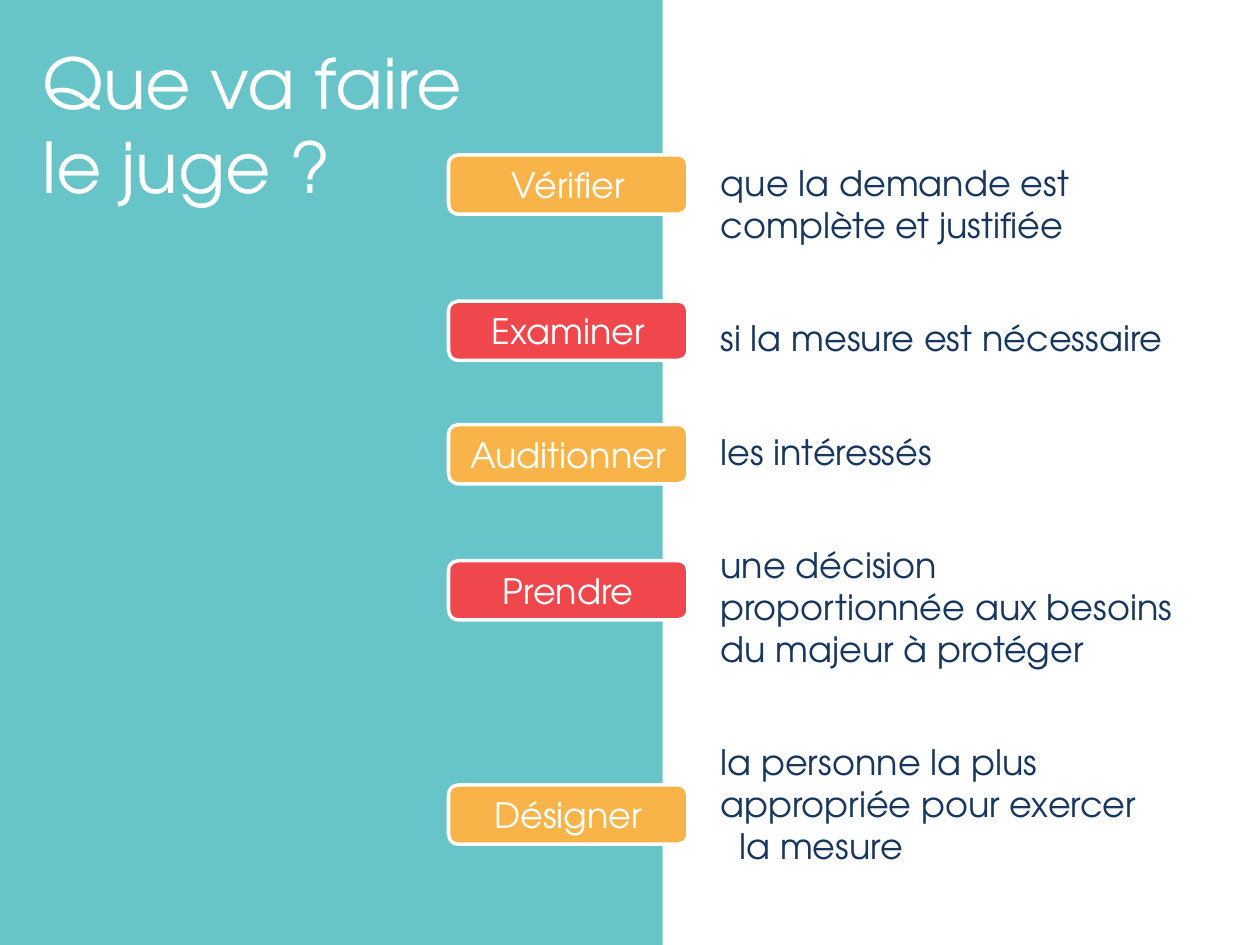
from pptx import Presentation
from pptx.dml.color import RGBColor
from pptx.enum.shapes import MSO_SHAPE as SHAPE
from pptx.enum.text import MSO_ANCHOR as ANCHOR, PP_ALIGN as ALIGN
from pptx.util import Inches, Pt

COLORS = {"teal": "67C4C9", "amber": "F8B449", "red": "F0474C",
          "white": "FFFFFF", "navy": "17375E"}
FONT = "TeX Gyre Adventor"
STEPS = [("Vérifier", 1.23), ("Examiner", 2.39), ("Auditionner", 3.37),
         ("Prendre", 4.45), ("Désigner", 6.23)]
DETAILS = ["que la demande est complète et justifiée",
           "si la mesure est nécessaire",
           "les intéressés",
           "une décision proportionnée aux besoins du majeur à protéger",
           "la personne la plus appropriée pour exercer"]
LAST_LINE = "la mesure"


def rgb(name):
    """Return the named colour."""
    return RGBColor.from_string(COLORS[name])


def write(p, text, size=20, color="white", align=ALIGN.LEFT, before=0, indent=0):
    """Write text into a paragraph with its format."""
    p.text = text
    p.alignment = align
    p.space_before = Pt(before)
    p.font.size = Pt(size)
    p.font.name = FONT
    p.font.color.rgb = rgb(color)
    if indent:
        p._p.get_or_add_pPr().set("marL", str(Inches(indent)))


def add_box(s, kind, x, y, w, h, fill, line=None):
    """Add a filled preset shape with an optional outline."""
    sp = s.shapes.add_shape(kind, Inches(x), Inches(y), Inches(w), Inches(h))
    sp.shadow.inherit = False
    sp.fill.solid()
    sp.fill.fore_color.rgb = rgb(fill)
    if line:
        sp.line.color.rgb = rgb(line)
        sp.line.width = Pt(2)
    else:
        sp.line.fill.background()
    return sp


def add_text_frame(s, x, y, w, h, anchor=ANCHOR.TOP):
    """Add a wrapping text box and return its text frame."""
    tf = s.shapes.add_textbox(Inches(x), Inches(y), Inches(w), Inches(h)).text_frame
    tf.word_wrap = True
    tf.vertical_anchor = anchor
    return tf


def add_title_panel(s, x, y, w, h):
    """Draw the teal panel with the title at its top."""
    add_box(s, SHAPE.RECTANGLE, x, y, w, h, "teal")
    tf = add_text_frame(s, x + 0.24, y + 0.22, w - 0.5, 1.52, ANCHOR.MIDDLE)
    write(tf.paragraphs[0], "Que va faire\vle juge ?", size=40)


def add_details(s, x, y, w, h):
    """Write what the judge does, one paragraph for each step."""
    tf = add_text_frame(s, x, y, w, h)
    for i, text in enumerate(DETAILS):
        p = tf.add_paragraph() if i else tf.paragraphs[0]
        write(p, text, color="navy", before=40.8 if i else 0)
    write(tf.add_paragraph(), LAST_LINE, color="navy", indent=0.15)


def add_steps(s, x, w, h):
    """Draw the column of step labels in alternating colours."""
    for i, (text, y) in enumerate(STEPS):
        fill = "red" if i % 2 else "amber"
        sp = add_box(s, SHAPE.ROUNDED_RECTANGLE, x, y, w, h, fill, line="white")
        tf = sp.text_frame
        tf.margin_left = tf.margin_right = tf.margin_top = tf.margin_bottom = 0
        tf.vertical_anchor = ANCHOR.MIDDLE
        write(tf.paragraphs[0], text, align=ALIGN.CENTER)


def main():
    """Build the slide and save it."""
    prs = Presentation()
    prs.slide_width, prs.slide_height = Inches(10), Inches(7.5)
    s = prs.slides.add_slide(prs.slide_layouts[6])
    add_title_panel(s, 0, 0, 5.26, 7.5)
    add_details(s, 5.62, 1.23, 3.92, 5.92)
    add_steps(s, 3.56, 1.9, 0.47)
    prs.save("out.pptx")


if __name__ == "__main__":
    main()
